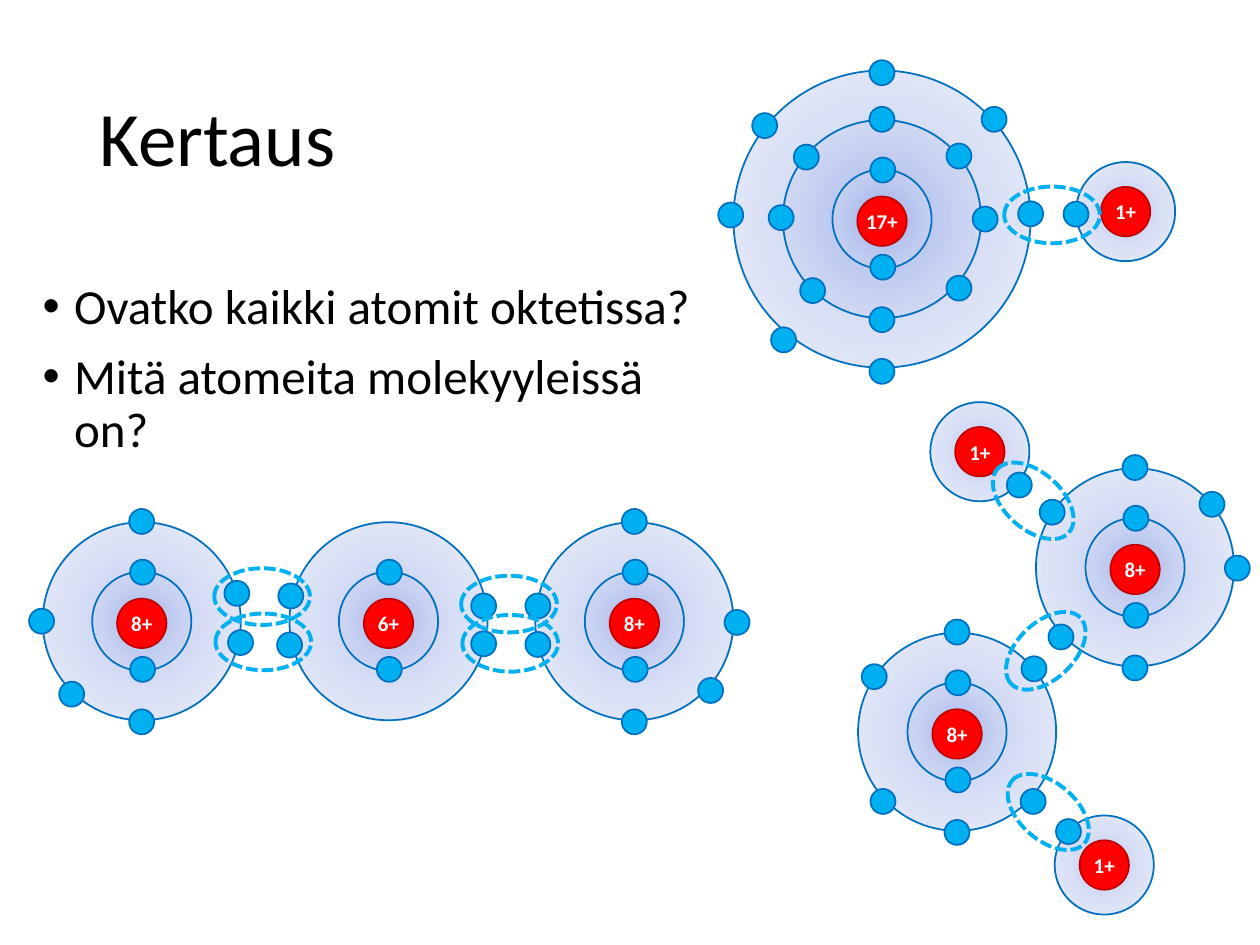
from lxml import etree
from pptx import Presentation
from pptx.dml.color import RGBColor as Rgb
from pptx.enum.dml import MSO_LINE as Dash
from pptx.enum.shapes import MSO_SHAPE as Form
from pptx.enum.text import MSO_ANCHOR as Anchor, PP_ALIGN as Align
from pptx.oxml import parse_xml
from pptx.oxml.ns import nsdecls, qn
from pptx.util import Pt

HUES = {
    "ink": "000000", "white": "FFFFFF", "core": "FF0000", "rim": "C00000",
    "dot": "00B0F0", "ring": "0070C0",
    "deep": "96ABEA", "mid": "C0CBF0", "pale": "E0E5F7",
}
FADE = (("deep", 0), ("mid", 50), ("pale", 100))
SHELL = 56.6
CORE = 28.2
DOT = 14.3
BOND = (54.7, 32.4)
TOP = (0, -57)
BASE = (0, 57.5)


def hue(name):
    return Rgb.from_string(HUES[name])


class Deck:
    def __init__(self):
        self.show = Presentation()
        self.show.slide_width, self.show.slide_height = Pt(720), Pt(540)
        self.slide = self.show.slides.add_slide(self.show.slide_layouts[6])
        self.group = None

    def style(self, para, size, tint, bold=False):
        font = para.font
        font.name, font.size, font.bold = "Calibri", Pt(size), bold
        font.color.rgb = hue(tint)

    def text(self, box, lines, size, anchor=Anchor.TOP, bullet=False):
        frame = self.slide.shapes.add_textbox(*map(Pt, box)).text_frame
        frame.word_wrap, frame.vertical_anchor = True, anchor
        for i, line in enumerate(lines):
            para = frame.add_paragraph() if i else frame.paragraphs[0]
            para.text, para.line_spacing = line, 0.9
            if i:
                para.space_before = Pt(10)
            if bullet:
                props = para._p.get_or_add_pPr()
                props.set("marL", str(Pt(18)))
                props.set("indent", str(-Pt(18)))
                face = etree.SubElement(props, qn("a:buFont"))
                face.set("typeface", "Arial")
                etree.SubElement(props, qn("a:buChar")).set("char", "•")
            self.style(para, size, "ink")

    def oval(self, x, y, wide, high, line, width=1, fill=None):
        spot = (x - wide / 2, y - high / 2, wide, high)
        shape = self.group.shapes.add_shape(Form.OVAL, *map(Pt, spot))
        shape.shadow.inherit = False
        shape.line.color.rgb, shape.line.width = hue(line), Pt(width)
        if fill:
            shape.fill.solid()
            shape.fill.fore_color.rgb = hue(fill)
        else:
            shape.fill.background()
        return shape

    def shell(self, x, y, size):
        shape = self.oval(x, y, size, size, "ring")
        stops = "".join(
            f'<a:gs pos="{at * 1000}"><a:srgbClr val="{HUES[name]}">'
            '<a:alpha val="60000"/></a:srgbClr></a:gs>' for name, at in FADE)
        props = shape._element.spPr
        props.replace(props.find(qn("a:noFill")), parse_xml(
            f'<a:gradFill {nsdecls("a")}><a:gsLst>{stops}</a:gsLst>'
            '<a:path path="circle"><a:fillToRect l="50000" t="50000" '
            'r="50000" b="50000"/></a:path></a:gradFill>'))

    def core(self, x, y, charge):
        shape = self.oval(x, y, CORE, CORE, "rim", fill="core")
        frame = shape.text_frame
        frame.margin_left = frame.margin_right = 0
        frame.margin_top = frame.margin_bottom = 0
        frame.word_wrap, frame.vertical_anchor = False, Anchor.MIDDLE
        para = frame.paragraphs[0]
        para.text, para.alignment = f"{charge}+", Align.CENTER
        self.style(para, 12, "white", True)

    def atom(self, x, y, charge, rings, dots):
        for n in range(rings, 0, -1):
            self.shell(x, y, n * SHELL)
        self.core(x, y + (1.2 if rings > 1 else 0), charge)
        pair = [(0.5, -28), (0.5, 27.5)] if rings > 1 else []
        for dx, dy in pair + dots:
            self.oval(x + dx, y + dy, DOT, DOT, "ring", fill="dot")

    def bond(self, x, y, turn=0):
        shape = self.oval(x, y, *BOND, "dot", 2.25)
        shape.line.dash_style = Dash.SQUARE_DOT
        shape.rotation = turn

    def bundle(self, atoms, bonds):
        self.group = self.slide.shapes.add_group_shape()
        for atom in atoms:
            self.atom(*atom)
        for bond in bonds:
            self.bond(*bond)


def main():
    deck = Deck()
    deck.text((49.7, 28.8, 620.6, 104.4), ["Kertaus"], 44, Anchor.MIDDLE)
    deck.text((17.3, 157.7, 385.2, 112.3), [
        "Ovatko kaikki atomit oktetissa?",
        "Mitä atomeita molekyyleissä on?"], 28, bullet=True)

    middle = [TOP, (44, -36), (59, 0), (44, 39.5), BASE,
              (-57.6, -0.8), (-39.6, 40.9), (-43.2, -35.4)]
    outer = [(0, -83.6), (64.1, -57), (-67, -53.4), (85, -3),
             (-86.4, -2.3), (-56.2, 69), (0, 87)]
    deck.bundle(
        [(504, 125.2, 17, 3, middle + outer),
         (643.2, 120.9, 1, 1, [(-28.3, 1.5)])],
        [(601.2, 122.8)])

    deck.bundle(
        [(81, 355, 8, 2, [TOP, (54.4, -15.9), (56.5, 12.2), BASE,
                          (-57.2, 0), (-40, 41.7)]),
         (222, 355, 6, 2, [(54.4, -8.7), (54.4, 12.9),
                           (-56.5, 13.6), (-55.8, -14.4)]),
         (362.5, 355, 8, 2, [TOP, (58.7, 0.7), (43.6, 39.6), BASE,
                             (-55.1, -8.7), (-55.1, 13.3)])],
        [(149.8, 340.9), (150.5, 366.8), (290.9, 345.2), (291.6, 367.6)])

    deck.bundle(
        [(546.9, 418.2, 8, 2, [TOP, (44, -36), (43.5, 39.8), BASE,
                               (-47.3, -31.5), (-42.3, 39.8)]),
         (648.6, 324.2, 8, 2, [TOP, (44, -36), (58.5, 0.5), BASE,
                               (-47.3, -31.5), (-42.3, 39.8)]),
         (559.9, 258.1, 1, 1, [(22.6, 19.1)]),
         (631, 494.3, 1, 1, [(-20.4, -19.1)])],
        [(590.4, 286.2, 41.8), (597.6, 371.9, 316.3), (599, 464, 41.2)])
    deck.show.save("out.pptx")


if __name__ == "__main__":
    main()
